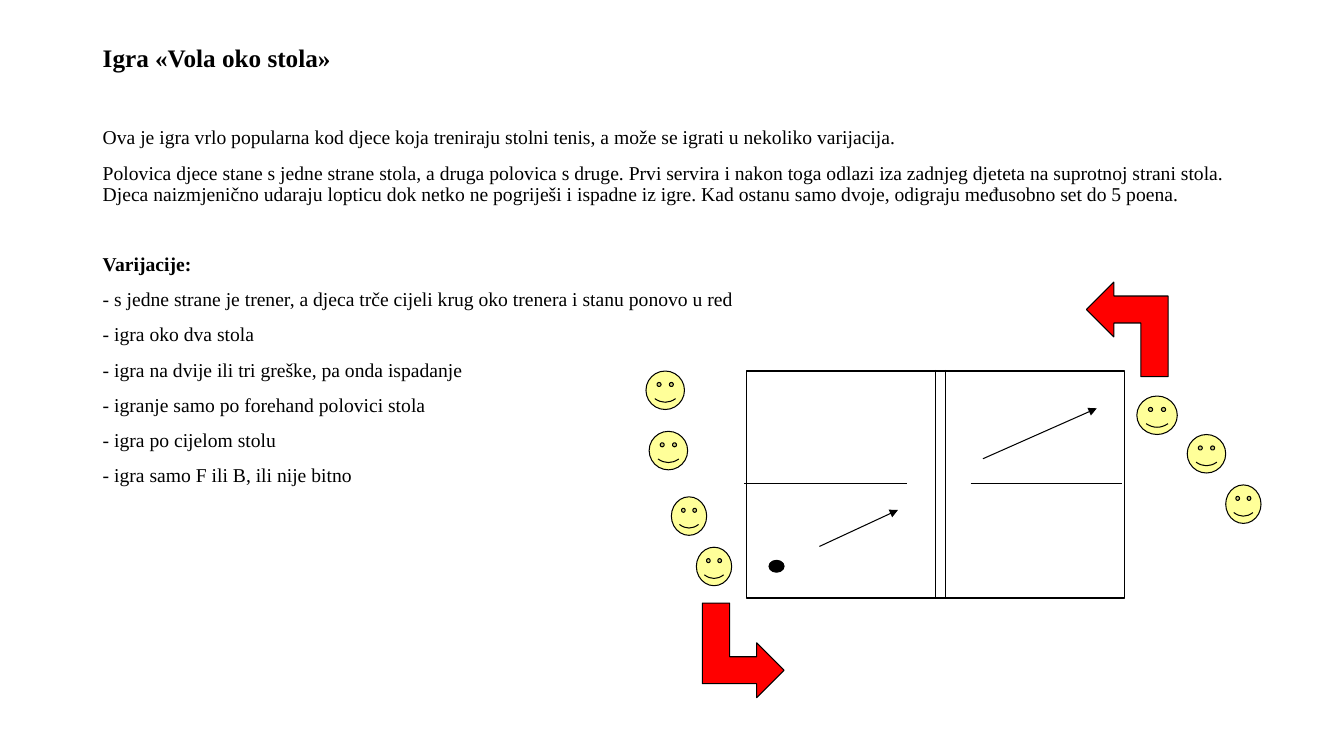
from lxml import etree
from pptx import Presentation
from pptx import util as u
from pptx.dml.color import RGBColor
from pptx.enum import shapes, text
from pptx.oxml import ns

BLACK = RGBColor(0x00, 0x00, 0x00)
WHITE = RGBColor(0xFF, 0xFF, 0xFF)
RED = RGBColor(0xFF, 0x00, 0x00)
YELLOW = RGBColor(0xFF, 0xFF, 0x99)

TITLE = "Igra «Vola oko stola»"
INTRO = [
    "Ova je igra vrlo popularna kod djece koja treniraju stolni tenis, a može se igrati u nekoliko varijacija.",
    "Polovica djece stane s jedne strane stola, a druga polovica s druge. Prvi servira i nakon toga odlazi iza "
    "zadnjeg djeteta na suprotnoj strani stola. Djeca naizmjenično udaraju lopticu dok netko ne pogriješi i "
    "ispadne iz igre. Kad ostanu samo dvoje, odigraju međusobno set do 5 poena.",
]
HEADING = "Varijacije:"
VARIATIONS = [
    "- s jedne strane je trener, a djeca trče cijeli krug oko trenera i stanu ponovo u red",
    "- igra oko dva stola",
    "- igra na dvije ili tri greške, pa onda ispadanje",
    "- igranje samo po forehand polovici stola",
    "- igra po cijelom stolu",
    "- igra samo F ili B, ili nije bitno",
]

# All positions are in centimetres.
PLAYER_HEIGHT = 0.97
PLAYERS = [  # left, top, width
    (28.65, 9.98, 1.02), (29.92, 10.95, 0.97), (30.89, 12.22, 0.89),
    (16.28, 9.35, 0.97), (16.36, 10.87, 0.97), (16.92, 12.52, 0.89), (17.55, 13.79, 0.89),
]
NET_TOP, NET_BOTTOM, MIDDLE = 9.32, 15.04, 12.19
TABLE_LINES = [
    (23.57, NET_TOP, 23.57, NET_BOTTOM), (23.83, NET_TOP, 23.83, NET_BOTTOM),
    (18.75, MIDDLE, 22.86, MIDDLE), (24.46, MIDDLE, 28.27, MIDDLE),
]
BALL_ARROWS = [
    (20.65, 13.77, 22.63, 12.85), (24.77, 11.56, 27.64, 10.29),
    (24.77, 11.56, 24.77, 11.56), (23.83, NET_TOP, 23.83, NET_TOP),
]
BENT_ARROW = [  # offsets from the tip, which points left
    (0, 0), (0.69, 0.69), (0.69, 0.34), (1.37, 0.34), (1.37, 1.69),
    (2.06, 1.69), (2.06, -0.34), (0.69, -0.34), (0.69, -0.69),
]


class GameSlide:
    font = "Times New Roman"
    line_width = u.Pt(0.75)

    def __init__(self, slide):
        self.slide = slide

    def text_box(self, left, top, width, height, paragraphs):
        """Add a text box; each paragraph is (text, size, bold, space before)."""
        frame = self.slide.shapes.add_textbox(*map(u.Cm, (left, top, width, height))).text_frame
        frame.word_wrap = True
        frame.vertical_anchor = text.MSO_ANCHOR.TOP
        for index, (words, size, bold, space) in enumerate(paragraphs):
            paragraph = frame.add_paragraph() if index else frame.paragraphs[0]
            paragraph.line_spacing = 0.9
            paragraph.space_before = u.Pt(space)
            run = paragraph.add_run()
            run.text = words
            run.font.name = self.font
            run.font.size = u.Pt(size)
            run.font.bold = bold
            run.font.color.rgb = BLACK

    def paint(self, shape, fill):
        shape.shadow.inherit = False
        shape.fill.solid()
        shape.fill.fore_color.rgb = fill
        shape.line.color.rgb = BLACK
        shape.line.width = self.line_width

    def shape(self, kind, left, top, width, height, fill):
        shape = self.slide.shapes.add_shape(kind, *map(u.Cm, (left, top, width, height)))
        self.paint(shape, fill)

    def bent_arrow(self, tip_x, tip_y, direction):
        """Add a bent arrow; direction 1 points left, -1 turns it half a circle."""
        points = [(u.Cm(tip_x + direction * x), u.Cm(tip_y + direction * y)) for x, y in BENT_ARROW]
        builder = self.slide.shapes.build_freeform(*points[0])
        builder.add_line_segments(points[1:], close=True)
        self.paint(builder.convert_to_shape(), RED)

    def line(self, ends, arrow=False):
        connector = self.slide.shapes.add_connector(shapes.MSO_CONNECTOR.STRAIGHT, *map(u.Cm, ends))
        connector.line.color.rgb = BLACK
        connector.line.width = self.line_width
        if arrow:
            etree.SubElement(connector.line._get_or_add_ln(), ns.qn("a:tailEnd"), type="triangle")
        etree.SubElement(connector._element.spPr, ns.qn("a:effectLst"))


def main():
    presentation = Presentation()
    presentation.slide_width = u.Cm(33.87)
    presentation.slide_height = u.Cm(19.05)
    game = GameSlide(presentation.slides.add_slide(presentation.slide_layouts[6]))
    kinds = shapes.MSO_SHAPE

    game.text_box(2.34, 1.02, 29.21, 2.08, [(TITLE, 18, True, 0)])
    body = [(words, 14, False, 10) for words in INTRO]
    body.append((HEADING, 14, True, 35))
    body += [(words, 14, False, 10) for words in VARIATIONS]
    game.text_box(2.34, 3.1, 29.21, 14.05, body)

    game.shape(kinds.FLOWCHART_PROCESS, 18.82, 9.35, 9.53, 5.72, WHITE)
    for left, top, width in PLAYERS:
        game.shape(kinds.SMILEY_FACE, left, top, width, PLAYER_HEIGHT, YELLOW)
    game.shape(kinds.OVAL, 19.38, 14.12, 0.38, 0.3, BLACK)
    for ends in TABLE_LINES:
        game.line(ends)
    for ends in BALL_ARROWS:
        game.line(ends, arrow=True)
    game.bent_arrow(27.38, 7.8, 1)
    game.bent_arrow(19.76, 16.89, -1)

    presentation.save("out.pptx")


if __name__ == "__main__":
    main()
